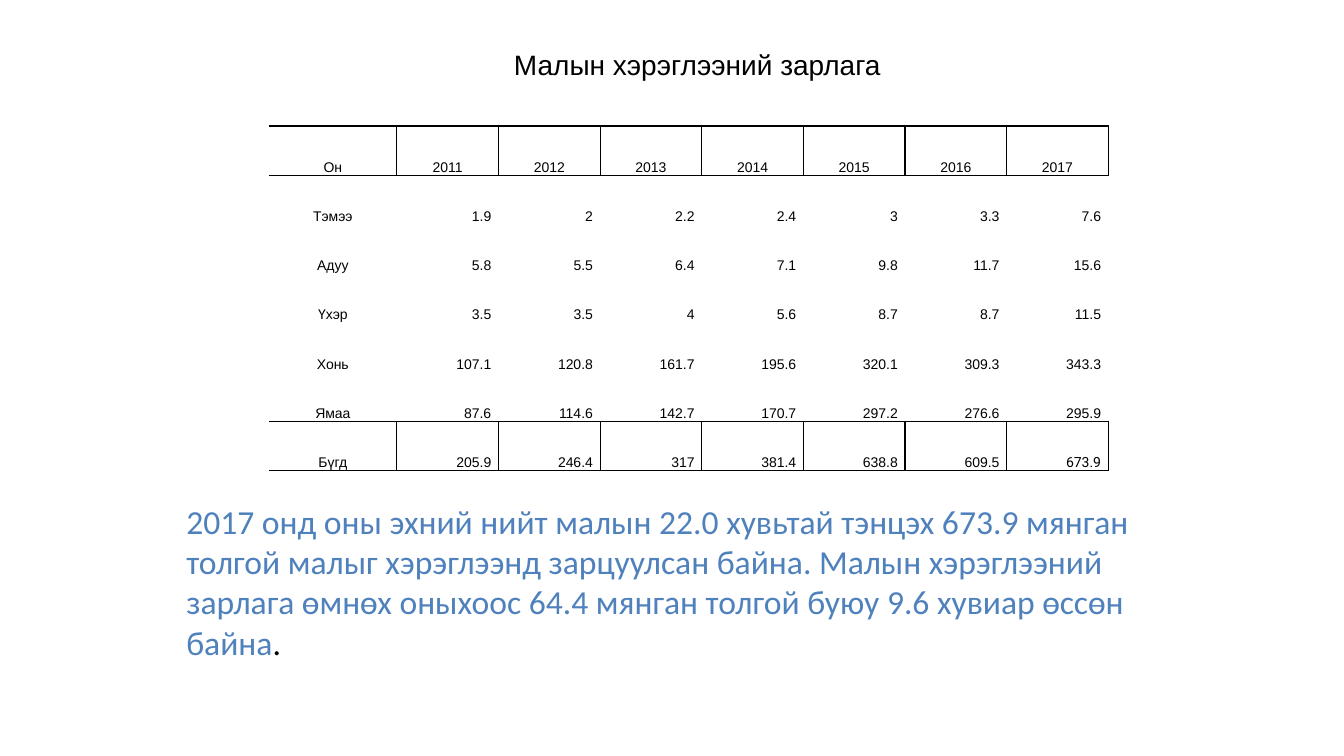
from lxml import etree
from pptx import Presentation
from pptx.dml.color import RGBColor
from pptx.enum import text
from pptx.oxml import ns
from pptx.util import Pt

BLACK = RGBColor(0x00, 0x00, 0x00)
BLUE = RGBColor(0x4F, 0x81, 0xBD)

TITLE = "Малын хэрэглээний зарлага"
LIVESTOCK = [
    ["Он", "2011", "2012", "2013", "2014", "2015", "2016", "2017"],
    ["Тэмээ", "1.9", "2", "2.2", "2.4", "3", "3.3", "7.6"],
    ["Адуу", "5.8", "5.5", "6.4", "7.1", "9.8", "11.7", "15.6"],
    ["Үхэр", "3.5", "3.5", "4", "5.6", "8.7", "8.7", "11.5"],
    ["Хонь", "107.1", "120.8", "161.7", "195.6", "320.1", "309.3", "343.3"],
    ["Ямаа", "87.6", "114.6", "142.7", "170.7", "297.2", "276.6", "295.9"],
    ["Бүгд", "205.9", "246.4", "317", "381.4", "638.8", "609.5", "673.9"],
]
SUMMARY = (
    "2017 онд оны эхний нийт малын 22.0 хувьтай тэнцэх 673.9 мянган толгой "
    "малыг хэрэглээнд зарцуулсан байна. Малын хэрэглээний зарлага өмнөх "
    "оныхоос 64.4 мянган толгой буюу 9.6 хувиар өссөн байна"
)

TABLE_LEFT, TABLE_TOP, TABLE_WIDTH, TABLE_HEIGHT = 192, 90, 599.8, 246.2
LABEL_WIDTH = 91.5
LAST_ROW = len(LIVESTOCK) - 1
LAST_COLUMN = len(LIVESTOCK[0]) - 1
FRAMED_ROWS = (0, LAST_ROW)


def add_run(paragraph, words, size, font, color):
    run = paragraph.add_run()
    run.text = words
    run.font.size = Pt(size)
    run.font.name = font
    run.font.bold = False
    run.font.color.rgb = color


def add_text(slide, left, top, width, height, wrap, anchor, align, runs):
    box = slide.shapes.add_textbox(Pt(left), Pt(top), Pt(width), Pt(height))
    frame = box.text_frame
    frame.word_wrap = wrap
    frame.vertical_anchor = anchor
    frame.auto_size = text.MSO_AUTO_SIZE.SHAPE_TO_FIT_TEXT
    paragraph = frame.paragraphs[0]
    paragraph.alignment = align
    for run in runs:
        add_run(paragraph, *run)


def set_borders(cell, drawn_sides):
    properties = cell._tc.get_or_add_tcPr()
    for position, side in enumerate("LRTB"):
        line = etree.Element(ns.qn(f"a:ln{side}"), w=str(Pt(1)))
        if side in drawn_sides:
            fill = etree.SubElement(line, ns.qn("a:solidFill"))
            etree.SubElement(fill, ns.qn("a:srgbClr"), val=str(BLACK))
        else:
            etree.SubElement(line, ns.qn("a:noFill"))
        properties.insert(position, line)


def sides_for(row, column):
    if row in FRAMED_ROWS:
        return "LRTB" if column else "RTB"
    return ("T" if row == 1 else "") + ("B" if row == LAST_ROW - 1 else "")


def add_livestock_table(slide):
    table = slide.shapes.add_table(
        len(LIVESTOCK), len(LIVESTOCK[0]),
        Pt(TABLE_LEFT), Pt(TABLE_TOP), Pt(TABLE_WIDTH), Pt(TABLE_HEIGHT),
    ).table
    table.first_row = table.horz_banding = False
    year_width = (TABLE_WIDTH - LABEL_WIDTH) / LAST_COLUMN
    for column, table_column in enumerate(table.columns):
        table_column.width = Pt(year_width if column else LABEL_WIDTH)
    for row, values in enumerate(LIVESTOCK):
        table.rows[row].height = Pt(TABLE_HEIGHT / len(LIVESTOCK))
        for column, value in enumerate(values):
            cell = table.cell(row, column)
            cell.fill.background()
            cell.margin_left = cell.margin_right = Pt(5.2)
            cell.margin_top = cell.margin_bottom = 0
            cell.vertical_anchor = text.MSO_ANCHOR.BOTTOM
            set_borders(cell, sides_for(row, column))
            paragraph = cell.text_frame.paragraphs[0]
            paragraph.line_spacing = 1.15
            centred = row == 0 or column == 0
            paragraph.alignment = text.PP_ALIGN.CENTER if centred else text.PP_ALIGN.RIGHT
            grand_total = (row, column) == (LAST_ROW, LAST_COLUMN)
            add_run(paragraph, value, 10, "Roboto" if grand_total else "Arial", BLACK)


def main():
    deck = Presentation()
    deck.slide_width, deck.slide_height = Pt(960), Pt(540)
    slide = deck.slides.add_slide(deck.slide_layouts[6])
    add_livestock_table(slide)
    add_text(slide, 360, 30.2, 278, 31.5, False, text.MSO_ANCHOR.MIDDLE,
             text.PP_ALIGN.JUSTIFY, [(TITLE, 20, "Arial", BLACK)])
    add_text(slide, 126, 354, 708, 124, True, text.MSO_ANCHOR.TOP,
             text.PP_ALIGN.LEFT,
             [(SUMMARY, 24, "Calibri", BLUE), (".", 24, "Calibri", BLACK)])
    deck.save("out.pptx")


if __name__ == "__main__":
    main()
